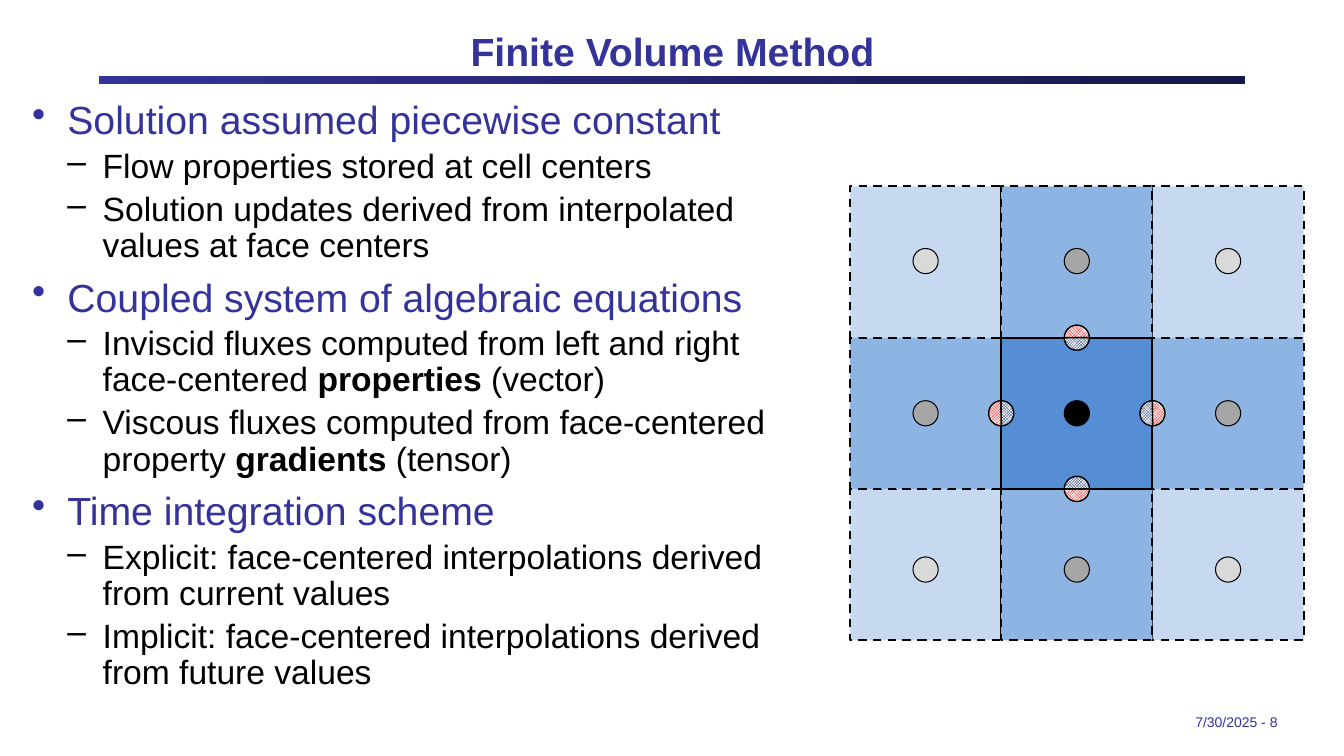
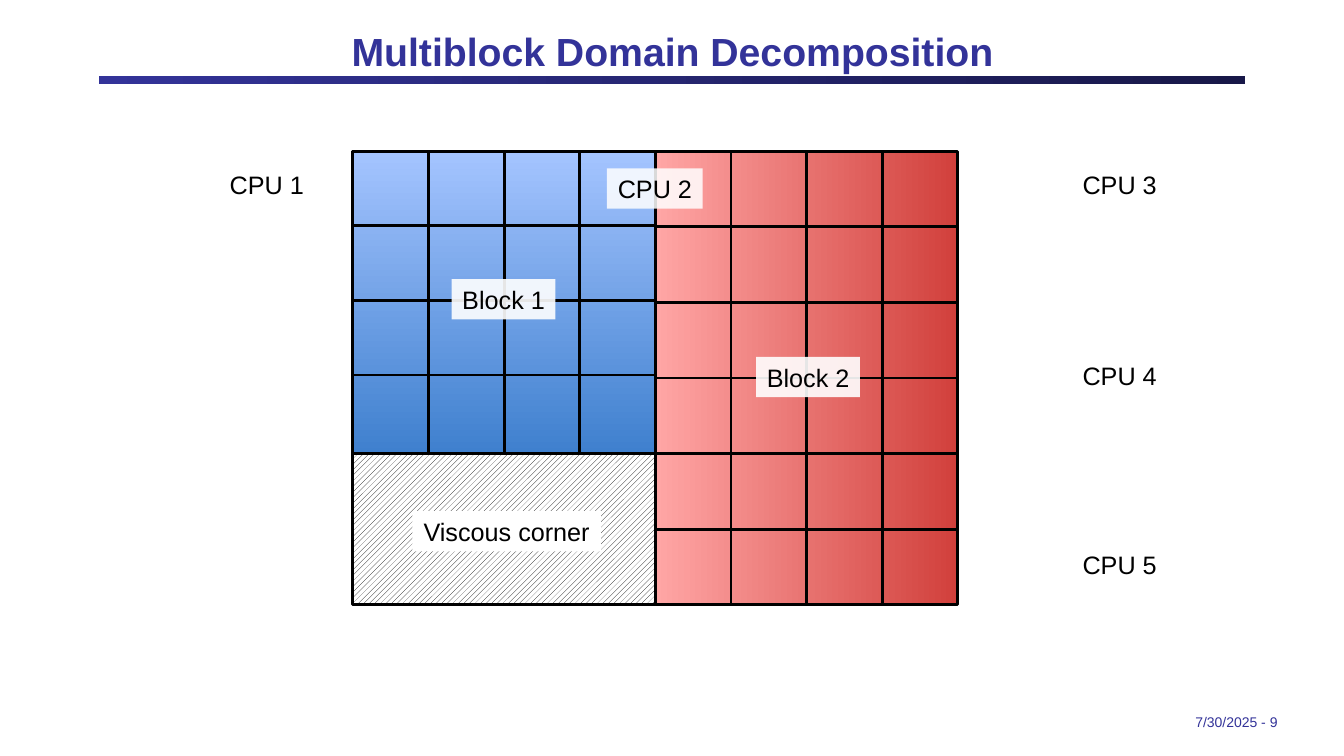
from lxml import etree
from pptx import Presentation
from pptx.dml.color import RGBColor
from pptx.enum.dml import MSO_LINE, MSO_PATTERN
from pptx.enum.shapes import MSO_CONNECTOR, MSO_SHAPE
from pptx.enum.text import MSO_ANCHOR, PP_ALIGN
from pptx.oxml.ns import qn
from pptx.util import Inches, Pt

RECT, OVAL, PIE = MSO_SHAPE.RECTANGLE, MSO_SHAPE.OVAL, MSO_SHAPE.PIE
LEFT, MID, RIGHT = PP_ALIGN.LEFT, PP_ALIGN.CENTER, PP_ALIGN.RIGHT
CHECK, HATCH = MSO_PATTERN.SMALL_CHECKER_BOARD, MSO_PATTERN.WIDE_UPWARD_DIAGONAL
DASH = MSO_LINE.DASH
FONT = "Arial"
COLORS = {
    "title": "333399", "dark": "181848", "black": "000000", "white": "FFFFFF",
    "red": "FF0000", "navy": "002060",
    "sky": "A4C4FF", "blue": "3F80CE", "rose": "FFA6A5", "brick": "D1403C",
}

# Content
DATE = "7/30/2025"
VOLUME = "Finite Volume Method"
BLOCKS = "Multiblock Domain Decomposition"
POINTS = [  # level, runs; every second run is bold
    (0, ["Solution assumed piecewise constant"]),
    (1, ["Flow properties stored at cell centers"]),
    (1, ["Solution updates derived from interpolated values at face centers"]),
    (0, ["Coupled system of algebraic equations"]),
    (1, ["Inviscid fluxes computed from left and right face-centered ",
         "properties", " (vector)"]),
    (1, ["Viscous fluxes computed from face-centered property ",
         "gradients", " (tensor)"]),
    (0, ["Time integration scheme"]),
    (1, ["Explicit: face-centered interpolations derived from current values"]),
    (1, ["Implicit: face-centered interpolations derived from future values"]),
]
LEVELS = [("•", 28, "title", 1.0), ("–", 24, "black", 0.9)]

# Stencil: cell and dot colours by distance from the middle cell
CELLS = ["558ED5", "8EB4E3", "C6D9F1"]
DOTS = ["000000", "A6A6A6", "D9D9D9"]
FACES = [(0, 1, 0), (-1, 0, 90), (0, -1, 180), (1, 0, 270)]  # dx, dy, turn
MIDX, MIDY, CELL, DOT = 10.68, 4.1, 1.5, 0.25
DOTY = {-1: 2.59, 0: 4.1, 1: 5.65}

# Blocks: left, top, columns, rows, row height, height, colours, angle
STEP = 0.75
GRIDS = [
    (3.5, 1.5, 4, 4, 0.74, 3, "sky", "blue", 270),
    (6.5, 1.5, 4, 6, 0.75, 4.5, "rose", "brick", 0),
]
LABELS = [  # text, left, top, width, opacity in percent
    ("CPU 1", 2.17, 1.63, 0.95, 85), ("CPU 2", 6.02, 1.67, 0.95, 85),
    ("CPU 3", 10.63, 1.63, 0.95, 85), ("CPU 4", 10.63, 3.52, 0.95, 85),
    ("CPU 5", 10.63, 5.4, 0.95, 85), ("Block 1", 4.48, 2.77, 1.03, 90),
    ("Block 2", 7.5, 3.54, 1.03, 90), ("Viscous corner", 4.09, 5.07, 1.87, 100),
]


def rgb(name):
    return RGBColor.from_string(COLORS.get(name, name))


def shape(slide, kind, box, fill=None, line=0, dash=None):
    item = slide.shapes.add_shape(kind, *map(Inches, box))
    item.shadow.inherit = False
    if fill:
        item.fill.solid()
        item.fill.fore_color.rgb = rgb(fill)
    if line:
        item.line.color.rgb = rgb("black")
        item.line.width = Pt(line)
        if dash:
            item.line.dash_style = dash
    else:
        item.line.fill.background()
    return item


def shade(item, first, last, angle):
    item.fill.gradient()
    item.fill.gradient_angle = angle
    for stop, name, pos in zip(item.fill.gradient_stops, (first, last), (0, 1)):
        stop.color.rgb = rgb(name)
        stop.position = pos


def weave(item, kind, name):
    item.fill.patterned()
    item.fill.pattern = kind
    item.fill.fore_color.rgb = rgb(name)
    item.fill.back_color.rgb = rgb("white")


def line(slide, x1, y1, x2, y2):
    item = slide.shapes.add_connector(
        MSO_CONNECTOR.STRAIGHT, *map(Inches, (x1, y1, x2, y2)))
    item.line.color.rgb = rgb("black")
    item.line.width = Pt(2)
    props = item._element.find(qn("p:spPr"))
    etree.SubElement(props, qn("a:effectLst"))


def style(para, size, color, bold=False):
    para.font.name = FONT
    para.font.size = Pt(size)
    para.font.bold = bold
    para.font.color.rgb = rgb(color)


def write(item, text, size, color, align, bold=False, wrap=True):
    frame = item.text_frame
    frame.word_wrap = wrap
    frame.vertical_anchor = MSO_ANCHOR.MIDDLE
    frame.margin_top = frame.margin_bottom = 0
    frame.margin_left = frame.margin_right = 0
    para = frame.paragraphs[0]
    para.text = text
    para.alignment = align
    style(para, size, color, bold)


def textbox(slide, *box):
    return slide.shapes.add_textbox(*map(Inches, box))


def start(deck, title, number):
    """Add a slide with the shared title, rule and footer."""
    slide = deck.slides.add_slide(deck.slide_layouts[6])
    shade(shape(slide, RECT, (0.98, 0.75, 11.37, 0.08)), "title", "dark", 0)
    write(textbox(slide, 0.67, 0.21, 12, 0.58), title, 28, "title", MID, True)
    foot = textbox(slide, 9.89, 7, 2.78, 0.33)
    write(foot, f"{DATE} - {number}", 10, "title", RIGHT)
    return slide


def bullets(slide):
    frame = textbox(slide, 0.22, 0.9, 7.92, 6.49).text_frame
    frame.word_wrap = True
    for i, (level, runs) in enumerate(POINTS):
        para = frame.paragraphs[0] if i == 0 else frame.add_paragraph()
        mark, size, color, gap = LEVELS[level]
        props = para._p.get_or_add_pPr()
        props.set("marL", str(Inches(0.35 * (level + 1))))
        props.set("indent", str(Inches(-0.35)))
        etree.SubElement(props, qn("a:buChar"), char=mark)
        para.level = level
        para.line_spacing = gap
        para.space_before = Pt(size * 0.2 if i else 0)
        style(para, size, color)
        for j, text in enumerate(runs):
            run = para.add_run()
            run.text = text
            if j % 2:
                run.font.bold = True


def dot(x, y):
    return x - DOT / 2, y - DOT / 2, DOT, DOT


def stencil(slide):
    # Cells from the corners inward, so the solid outline stays on top
    spots = [(dx, dy) for dy in (-1, 0, 1) for dx in (-1, 0, 1)]
    spots.sort(key=lambda s: -abs(s[0]) - abs(s[1]))
    for dx, dy in spots:
        far = abs(dx) + abs(dy)
        box = (MIDX + (dx - 0.5) * CELL, MIDY + (dy - 0.5) * CELL, CELL, CELL)
        shape(slide, RECT, box, CELLS[far], 1.5, DASH if far else None)
    for dx, dy in spots:
        far = abs(dx) + abs(dy)
        shape(slide, OVAL, dot(MIDX + dx * CELL, DOTY[dy]), DOTS[far], 0.75)
    # Face centers: red half outward, navy half inward
    for dx, dy, turn in FACES:
        box = dot(MIDX + dx * CELL / 2, MIDY + dy * CELL / 2)
        for color, extra in (("red", 0), ("navy", 180)):
            half = shape(slide, PIE, box, line=1)
            half.adjustments[0] = 0
            half.adjustments[1] = 107.38
            half.rotation = (turn + extra) % 360
            weave(half, CHECK, color)


def blocks(slide):
    weave(shape(slide, RECT, (3.5, 4.5, 3, 1.5), line=2), HATCH, "black")
    for x, y, cols, rows, high, tall, first, last, angle in GRIDS:
        wide = cols * STEP
        shade(shape(slide, RECT, (x, y, wide, tall), line=2), first, last, angle)
        for i in range(1, cols):
            line(slide, x + i * STEP, y, x + i * STEP, y + tall)
        for i in range(1, rows):
            line(slide, x, y + i * high, x + wide, y + i * high)
    for text, x, y, wide, clear in LABELS:
        tag = shape(slide, RECT, (x, y, wide, 0.4), "white")
        if clear < 100:
            tint = tag._element.spPr.find(qn("a:solidFill"))[0]
            etree.SubElement(tint, qn("a:alpha"), val=str(clear * 1000))
        write(tag, text, 18, "black", MID, wrap=False)


def main():
    deck = Presentation()
    deck.slide_width, deck.slide_height = Inches(13.33), Inches(7.5)
    slide = start(deck, VOLUME, 8)
    bullets(slide)
    stencil(slide)
    blocks(start(deck, BLOCKS, 9))
    deck.save("out.pptx")


if __name__ == "__main__":
    main()
